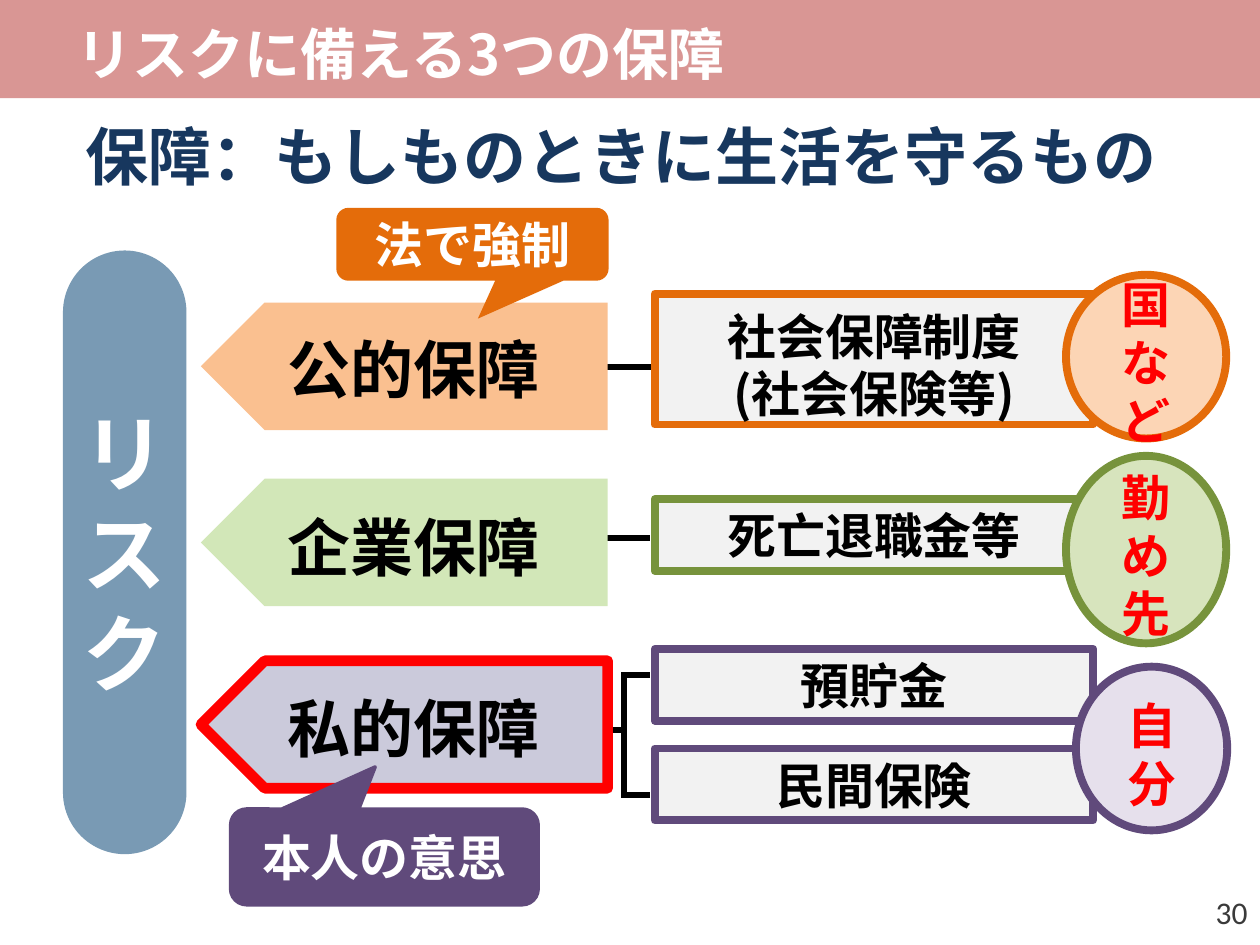
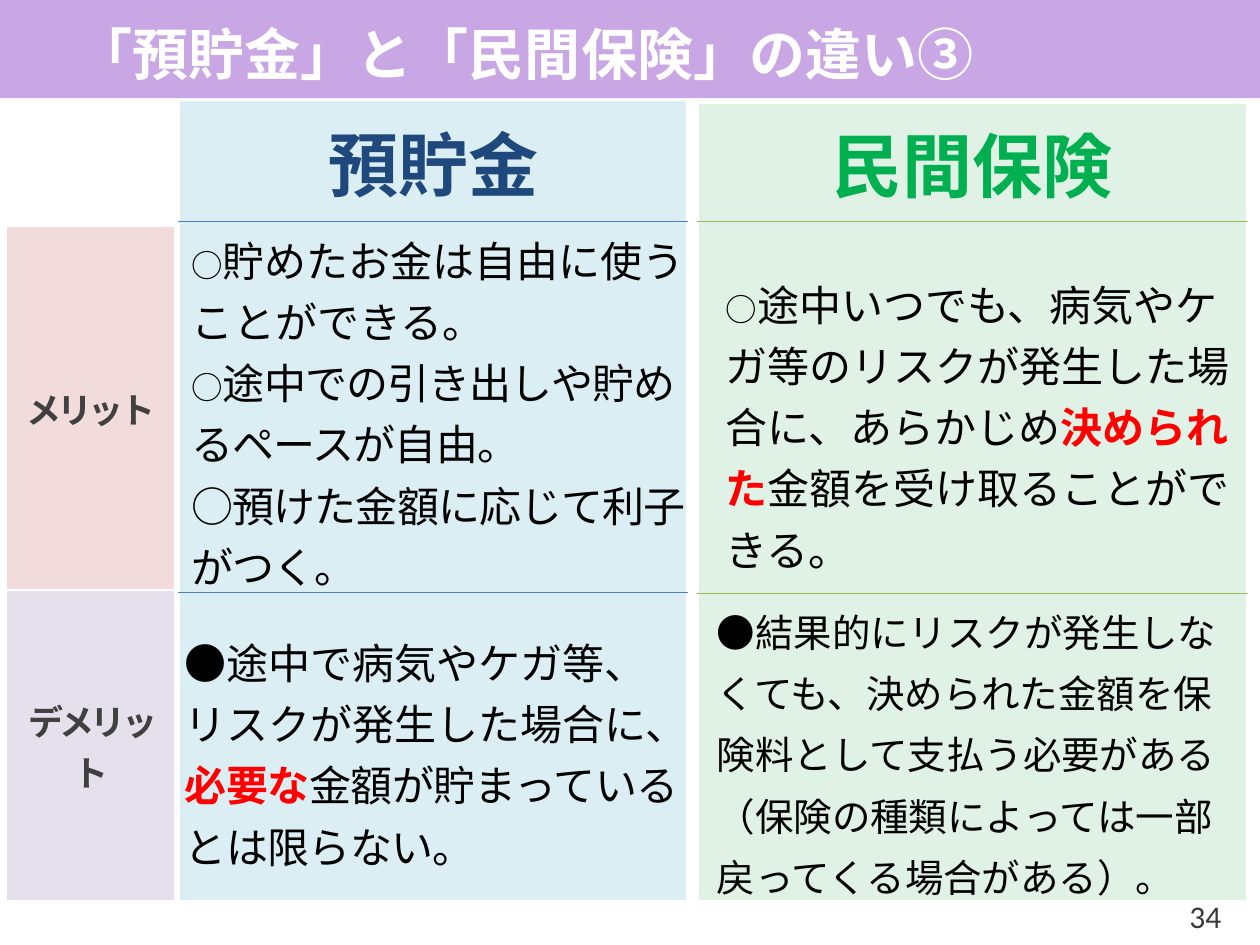
from lxml import etree
from pptx import Presentation
from pptx import util as u
from pptx.dml.color import RGBColor
from pptx.enum import shapes, text
from pptx.oxml.ns import qn

COLORS = {
    "white": "FFFFFF", "black": "000000", "red": "FF0000", "number": "3A3A3A",
    "rose": "D99694", "lilac": "C9A6E4", "navy": "17375E", "steel": "799AB4",
    "panel": "F2F2F2", "orange": "E46C0A", "peach": "FAC090", "light_peach": "FCD5B5",
    "green": "77933C", "mint": "D2E7B8", "light_green": "D7E4BD",
    "purple": "604A7B", "mauve": "CBCADB", "light_purple": "E6E0EC",
    "deposit": "1F497D", "deposit_bg": "DBEEF4", "deposit_rule": "4F81BD",
    "insurance": "00B050", "insurance_bg": "E0F1E6", "insurance_rule": "9BBB59",
    "merit_bg": "F2DCDB", "side_text": "404040",
}
RGB = {name: RGBColor.from_string(value) for name, value in COLORS.items()}
JAPANESE = "Noto Sans CJK JP"
KIND = shapes.MSO_SHAPE
ALIGN = text.PP_ALIGN
MIDDLE = text.MSO_ANCHOR.MIDDLE


def add_box(page, at, kind=None, fill=None, line=None, weight=4.5, side=0.25, top=0):
    """Add a preset shape, or a text box when kind is None; at is in cm."""
    place = [u.Cm(length) for length in at]
    if kind is None:
        box = page.shapes.add_textbox(*place)
    else:
        box = page.shapes.add_shape(kind, *place)
        box.shadow.inherit = False
        if fill:
            box.fill.solid()
            box.fill.fore_color.rgb = RGB[fill]
        else:
            box.fill.background()
        if line:
            box.line.color.rgb = RGB[line]
            box.line.width = u.Pt(weight)
        else:
            box.line.fill.background()
    frame = box.text_frame
    frame.word_wrap = True
    frame.vertical_anchor = MIDDLE
    frame.margin_left = frame.margin_right = u.Cm(side)
    frame.margin_top, frame.margin_bottom = u.Cm(top), 0
    return box


def write(frame, paragraphs, size, color, bold=True, align=ALIGN.CENTER,
          pitch=None, font=JAPANESE):
    """Fill a frame; a paragraph is a string or a list of (string, changes)."""
    for index, parts in enumerate(paragraphs):
        para = frame.paragraphs[0] if index == 0 else frame.add_paragraph()
        para.alignment = align
        if pitch:
            para.line_spacing = u.Pt(pitch)
        for string, changes in ([(parts, {})] if isinstance(parts, str) else parts):
            span = para.add_run()
            span.text = string
            span.font.name = font
            span.font.size = u.Pt(changes.get("size", size))
            span.font.bold = changes.get("bold", bold)
            span.font.color.rgb = RGB[changes.get("color", color)]
            props = span._r.get_or_add_rPr()
            if "spacing" in changes:
                props.set("spc", str(round(changes["spacing"] * 100)))
            etree.SubElement(props, qn("a:ea")).set("typeface", font)


deck = Presentation()
deck.slide_width, deck.slide_height = u.Cm(25.4), u.Cm(19.05)

# Shared title band and page number
pages = []
for title, band, number, number_at in [
    ("リスクに備える3つの保障", "rose", "30", (19.48, 17.88, 5.92, 1.02)),
    ("「預貯金」と「民間保険」の違い③", "lilac", "34", (18.95, 17.96, 5.92, 1.02)),
]:
    page = deck.slides.add_slide(deck.slide_layouts[6])
    add_box(page, (0, 0, 25.4, 1.98), KIND.RECTANGLE, band)
    box = add_box(page, (1.3, 0.08, 20, 2))
    write(box.text_frame, [title], 32, "white", align=ALIGN.LEFT)
    box = add_box(page, number_at)
    write(box.text_frame, [number], 18, "number", False, ALIGN.RIGHT, font="Calibri")
    pages.append(page)
protection, comparison = pages

# Slide 1: three kinds of protection
box = add_box(protection, (1.04, 2.13, 22.94, 2))
write(box.text_frame, ["保障：もしものときに生活を守るもの"], 36, "navy")

for x1, y1, x2, y2 in [
    (11.96, 7.39, 13.18, 7.39),
    (11.96, 10.85, 13.11, 10.85),
    (11.94, 14.71, 12.55, 14.71),
    (12.52, 16.03, 13.11, 16.03),
    (12.52, 13.61, 13.11, 13.61),
    (12.57, 13.56, 12.57, 16.05),
]:
    link = protection.shapes.add_connector(
        shapes.MSO_CONNECTOR.STRAIGHT, *[u.Cm(v) for v in (x1, y1, x2, y2)])
    link.line.color.rgb = RGB["black"]
    link.line.width = u.Pt(3.5)
    etree.SubElement(link._element.spPr, qn("a:effectLst"))

for lines, y, height, line in [
    (["社会保障制度", "(社会保険等)"], 5.92, 2.64, "orange"),
    (["死亡退職金等"], 10.06, 1.45, "green"),
    (["預貯金"], 13.08, 1.45, "purple"),
    (["民間保険"], 15.09, 1.45, "purple"),
]:
    several = len(lines) > 1
    box = add_box(protection, (13.2, y, 8.84, height), KIND.RECTANGLE, "panel", line,
                  top=0.24 if several else 0)
    write(box.text_frame, lines, 28, "black", pitch=33 if several else None)

pill = add_box(protection, (1.27, 5.05, 2.49, 12.17), KIND.ROUNDED_RECTANGLE, "steel", side=0)
pill.adjustments[0] = 0.5
write(pill.text_frame, ["リ", "ス", "ク"], 48, "white", pitch=57)

for label, y, label_y, fill, line in [
    ("公的保障", 6.1, 6.53, "peach", None),
    ("企業保障", 9.65, 10.11, "mint", None),
    ("私的保障", 13.32, 13.77, "mauve", "red"),
]:
    arrow = add_box(protection, (4.05, y, 8.2, 2.57), KIND.PENTAGON, fill, line, 6)
    arrow.rotation = 180
    box = add_box(protection, (5.54, label_y, 5.64, 1.8))
    box.text_frame.word_wrap = False
    write(box.text_frame, [label], 36, "black", align=ALIGN.LEFT)

for lines, at, fill, line in [
    (["国など"], (21.49, 5.54, 3.23, 3.3), "light_peach", "orange"),
    (["勤", "め先"], (21.49, 9.19, 3.23, 3.78), "light_green", "green"),
    (["自分"], (21.69, 13.44, 3.05, 3.3), "light_purple", "purple"),
]:
    box = add_box(protection, at, KIND.OVAL, fill, line, top=0.24)
    write(box.text_frame, lines, 28, "red", pitch=33)

for label, at, tip, fill, line in [
    ("法で強制", (6.78, 4.19, 5.49, 1.47), (0.02, 1.02), "orange", None),
    ("本人の意思", (4.65, 16.31, 6.2, 1.93), (-0.03, -0.94), "purple", "purple"),
]:
    callout = add_box(protection, at, KIND.ROUNDED_RECTANGULAR_CALLOUT, fill, line, 2)
    callout.adjustments[0], callout.adjustments[1] = tip
    write(callout.text_frame, [label], 28, "white")

# Slide 2: comparison tables; a row is (height, label, text colour, fill)
for x, y, width, rule, size, spacing, rows in [
    (14.07, 2.08, 11.07, "insurance_rule", 40, 0, [
        (2.39, "民間保険", "insurance", "insurance_bg"),
        (7.49, "", "black", "insurance_bg"),
        (6.2, "", "black", "insurance_bg")]),
    (3.61, 2.03, 10.24, "deposit_rule", 40, 0, [
        (2.44, "預貯金", "deposit", "deposit_bg"),
        (7.47, "", "black", "deposit_bg"),
        (6.22, "", "black", "deposit_bg")]),
    (0.13, 4.57, 3.4, "white", 20, -2.1, [
        (7.32, "メリット", "side_text", "merit_bg"),
        (6.27, "デメリット", "side_text", "light_purple")]),
]:
    total = sum(row[0] for row in rows)
    table = comparison.shapes.add_table(
        len(rows), 1, u.Cm(x), u.Cm(y), u.Cm(width), u.Cm(total)).table
    table.first_row = table.horz_banding = False
    for index, (height, label, color, fill) in enumerate(rows):
        table.rows[index].height = u.Cm(height)
        cell = table.cell(index, 0)
        cell.vertical_anchor = MIDDLE
        if label:
            write(cell.text_frame, [[(label, {"spacing": spacing})]], size, color)
        props = cell._tc.get_or_add_tcPr()
        inner_edges = {"a:lnT": index > 0, "a:lnB": index < len(rows) - 1}
        for tag, inner in inner_edges.items():
            edge = etree.SubElement(props, qn(tag), w=str(u.Pt(1)))
            paint = etree.SubElement(edge, qn("a:solidFill"))
            etree.SubElement(paint, qn("a:srgbClr"), val=COLORS[rule if inner else "white"])
        cell.fill.solid()
        cell.fill.fore_color.rgb = RGB[fill]

small = {"size": 18}
tight = {"spacing": -0.5}
key = {"color": "red", "bold": True}
for at, size, paragraphs in [
    ((3.61, 4.39, 10.59, 7.62), 24, [
        [("○", small), ("貯めたお金は自由に使うことができる。", {})],
        [("○", small), ("途中での引き出しや貯めるペースが自由。", tight)],
        [("○預けた金額に応じて利子がつく。", tight)]]),
    ((3.48, 12.5, 10.59, 5.13), 24, [
        [("●途中で病気やケガ等、リスクが発生した場合に、", {}),
         ("必要な", {**key, "spacing": -0.4}),
         ("金額が貯まっているとは限らない。", {"spacing": -0.4})]]),
    ((14.38, 5.28, 11.1, 5.11), 24, [
        [("○", small),
         ("途中いつでも、病気やケガ等のリスクが発生した場合に、あらかじめ", {}),
         ("決められた", key),
         ("金額を受け取ることができる。", {})]]),
    ((14.2, 11.84, 11.1, 6.32), 22, [
        "●結果的にリスクが発生しなくても、決められた金額を保険料として支払う必要がある"
        "（保険の種類によっては一部戻ってくる場合がある）。"]),
]:
    box = add_box(comparison, at, top=0.13)
    box.text_frame.vertical_anchor = text.MSO_ANCHOR.TOP
    write(box.text_frame, paragraphs, size, "black", False, ALIGN.LEFT, pitch=35)

deck.save("out.pptx")
